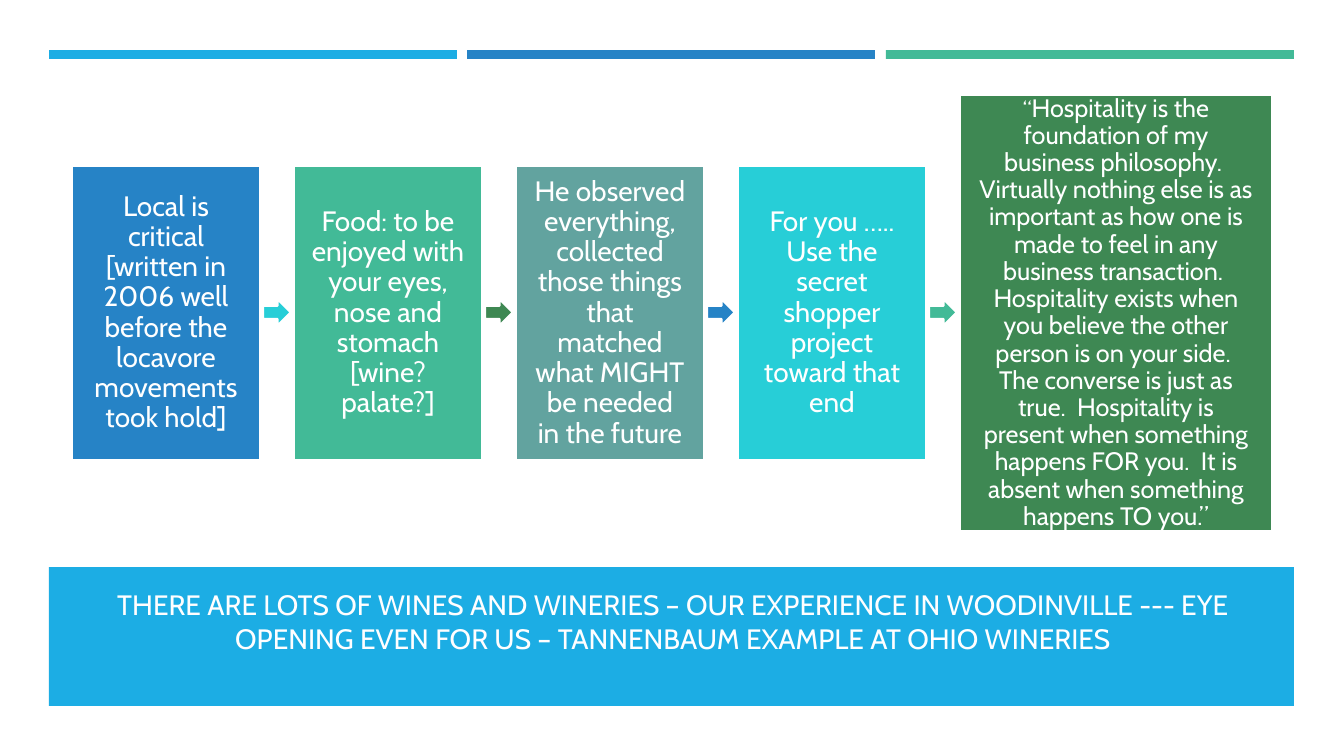
"""Build a five-step process slide about hospitality with a title band."""
from pptx import Presentation
from pptx import util as u
from pptx.dml.color import RGBColor
from pptx.enum import shapes, text

EMU_PER_PX = 914400 / 100.8
FONT = "Cabin"
WHITE = RGBColor(0xFF, 0xFF, 0xFF)
TITLE_WHITE = RGBColor(0xFF, 0xFE, 0xFF)
SKY = RGBColor(0x1C, 0xAD, 0xE4)
BLUE = RGBColor(0x26, 0x83, 0xC6)
MINT = RGBColor(0x42, 0xBA, 0x97)
TEAL = RGBColor(0x62, 0xA3, 0x9F)
CYAN = RGBColor(0x27, 0xCE, 0xD7)
GREEN = RGBColor(0x3E, 0x88, 0x53)

RECTANGLE = shapes.MSO_SHAPE.RECTANGLE
ARROW = shapes.MSO_SHAPE.RIGHT_ARROW

TITLE = (
    "THERE ARE LOTS OF WINES AND WINERIES – OUR EXPERIENCE IN WOODINVILLE --- "
    "EYE OPENING EVEN FOR US – TANNENBAUM EXAMPLE AT OHIO WINERIES"
)
STEPS = [
    ("Local is critical [written in 2006 well before the locavore movements took hold]", BLUE),
    ("Food: to be enjoyed with your eyes, nose and stomach [wine? palate?]", MINT),
    ("He observed everything, collected those things that matched what MIGHT be needed "
     "in the future", TEAL),
    ("For you ….. Use the secret shopper project toward that end", CYAN),
]
ARROW_COLORS = [CYAN, GREEN, BLUE, MINT]
QUOTE = (
    "Hospitality is the foundation of my business philosophy.  Virtually nothing else is as "
    "important as how one is made to feel in any business transaction.  Hospitality exists "
    "when you believe the other person is on your side.  The converse is just as true.  "
    "Hospitality is present when something happens FOR you.  It is absent when something "
    "happens TO you.”"
)
STEP_LEFT, STEP_PITCH = 72, 222


def px(length):
    """Convert pixels to EMU."""
    return u.Emu(round(length * EMU_PER_PX))


def add_block(slide, kind, box, fill, outlined=False):
    """Add a flat filled shape, with a white outline if asked."""
    shape = slide.shapes.add_shape(kind, *map(px, box))
    shape.shadow.inherit = False
    shape.fill.solid()
    shape.fill.fore_color.rgb = fill
    if outlined:
        shape.line.color.rgb = WHITE
        shape.line.width = u.Pt(1.75)
    else:
        shape.line.fill.background()
    return shape


def format_run(run, size, color=WHITE):
    """Set the font, size and colour of a run."""
    run.font.name = FONT
    run.font.size = u.Pt(size)
    run.font.color.rgb = color


def add_step(slide, box, fill, pieces):
    """Add a process box holding (wording, size) pieces in one paragraph."""
    frame = add_block(slide, RECTANGLE, box, fill, outlined=True).text_frame
    frame.word_wrap = True
    frame.vertical_anchor = text.MSO_ANCHOR.MIDDLE
    frame.margin_left = frame.margin_right = px(17)
    frame.margin_top = frame.margin_bottom = px(17)
    paragraph = frame.paragraphs[0]
    paragraph.alignment = text.PP_ALIGN.CENTER
    paragraph.line_spacing = 0.9
    for wording, size in pieces:
        run = paragraph.add_run()
        run.text = wording
        format_run(run, size)


def place_title(slide):
    """Fill and position the title placeholder above the title band."""
    title = slide.shapes.title
    title.left, title.top, title.width, title.height = map(px, (65, 581, 1216, 79))
    title.element.getparent().append(title.element)
    frame = title.text_frame
    frame.text = TITLE
    frame.word_wrap = True
    frame.auto_size = text.MSO_AUTO_SIZE.NONE
    frame.vertical_anchor = text.MSO_ANCHOR.BOTTOM
    paragraph = frame.paragraphs[0]
    paragraph.alignment = text.PP_ALIGN.CENTER
    format_run(paragraph.runs[0], 20, TITLE_WHITE)


def main():
    """Build and save the slide."""
    presentation = Presentation()
    presentation.slide_width, presentation.slide_height = px(1344), px(756)
    slide = presentation.slides.add_slide(presentation.slide_layouts[5])

    for index, color in enumerate((SKY, BLUE, MINT)):
        add_block(slide, RECTANGLE, (49 + index * 837 // 2, 50, 408, 9), color)
    add_block(slide, RECTANGLE, (49, 567, 1245, 139), SKY)
    place_title(slide)

    for index, ((wording, color), arrow_color) in enumerate(zip(STEPS, ARROW_COLORS)):
        left = STEP_LEFT + index * STEP_PITCH
        add_step(slide, (left, 166, 188, 294), color, [(wording, 20)])
        add_block(slide, ARROW, (left + 191, 299, 28, 27), arrow_color, outlined=True)
    quote_left = STEP_LEFT + len(STEPS) * STEP_PITCH
    add_step(slide, (quote_left, 95, 312, 436), GREEN, [("“", 16), (QUOTE, 18)])

    presentation.save("out.pptx")


if __name__ == "__main__":
    main()
